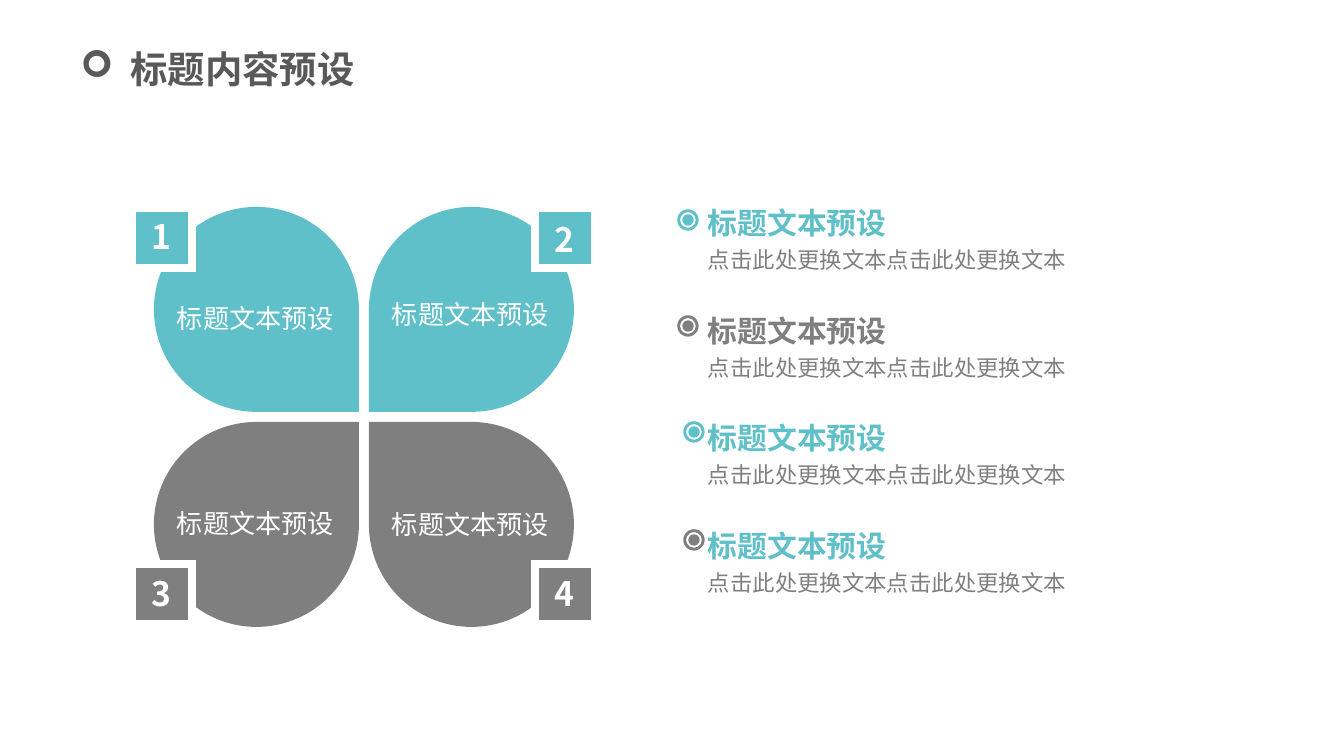
import pptx
import pptx.util
import pptx.dml.color
import pptx.enum.shapes
import pptx.enum.text
import pptx.oxml.ns
from lxml import etree

PX = 914400 / 134.4
FONT = "Noto Sans CJK SC"
HEX = {"teal": "5FC0C9", "gray": "7F7F7F", "body": "808080",
       "title": "595959", "white": "FFFFFF"}
KIND = pptx.enum.shapes.MSO_SHAPE
ALIGN = pptx.enum.text.PP_ALIGN
qn = pptx.oxml.ns.qn

TITLE = "标题内容预设"
# number, label, colour, label top, number top
PETALS = [
    ("1", "标题文本预设", "teal", 295, 209),
    ("2", "标题文本预设", "teal", 291, 212),
    ("3", "标题文本预设", "gray", 500, 566),
    ("4", "标题文本预设", "gray", 501, 566),
]
# heading, body, heading colour, marker colour, marker left, marker top
ITEMS = [
    ("标题文本预设", "点击此处更换文本点击此处更换文本", "teal", "teal", 678, 210),
    ("标题文本预设", "点击此处更换文本点击此处更换文本", "gray", "gray", 678, 316),
    ("标题文本预设", "点击此处更换文本点击此处更换文本", "teal", "teal", 684, 422),
    ("标题文本预设", "点击此处更换文本点击此处更换文本", "teal", "gray", 684, 530),
]


def emu(*nums):
    return [pptx.util.Emu(round(n * PX)) for n in nums]


def rgb(name):
    return pptx.dml.color.RGBColor.from_string(HEX[name])


def style(para, size, color, bold=False):
    font = para.font
    font.size = pptx.util.Pt(size)
    font.bold = bold
    font.color.rgb = rgb(color)
    font.name = FONT
    # East Asian text takes its own typeface entry
    etree.SubElement(font._rPr, qn("a:ea")).set("typeface", FONT)


def shape(kind, box, color, line=None, width=0):
    item = slide.shapes.add_shape(kind, *emu(*box))
    item.shadow.inherit = False
    item.fill.solid()
    item.fill.fore_color.rgb = rgb(color)
    if line:
        item.line.color.rgb = rgb(line)
        item.line.width = pptx.util.Pt(width)
    else:
        item.line.fill.background()
    return item


def text(words, box, size, color, bold=False, wrap=False, pad=0,
         align=ALIGN.LEFT, space=None):
    frame = slide.shapes.add_textbox(*emu(*box)).text_frame
    frame.word_wrap = wrap
    frame.margin_left = frame.margin_right = 0
    frame.margin_top = frame.margin_bottom = emu(pad)[0]
    para = frame.paragraphs[0]
    para.text = words
    para.alignment = align
    if space:
        para.line_spacing = space
    style(para, size, color, bold)


def head(title):
    title.left, title.top, title.width, title.height = emu(67, 39, 378, 59)
    frame = title.text_frame
    frame.word_wrap = True
    frame.vertical_anchor = pptx.enum.text.MSO_ANCHOR.TOP
    frame.auto_size = pptx.enum.text.MSO_AUTO_SIZE.SHAPE_TO_FIT_TEXT
    para = frame.paragraphs[0]
    para.text = TITLE
    para.alignment = ALIGN.LEFT
    props = para._p.get_or_add_pPr()
    indent = emu(50)[0]
    props.set("marL", str(indent))
    props.set("indent", str(-indent))
    etree.SubElement(props, qn("a:buFont")).set("typeface", "Wingdings")
    etree.SubElement(props, qn("a:buChar")).set("char", "➢")
    style(para, 20, "title", True)


deck = pptx.Presentation()
deck.slide_width, deck.slide_height = emu(1344, 756)
slide = deck.slides.add_slide(deck.slide_layouts[5])
head(slide.shapes.title)

for i, (num, label, color, *tops) in enumerate(PETALS):
    row, col = divmod(i, 2)
    petal = shape(KIND.TEAR, (154 + 215 * col, 207 + 215 * row, 205, 205), color)
    # The tip starts at top right; flips turn it to the centre
    xfrm = petal._element.spPr.find(qn("a:xfrm"))
    if col == 1:
        xfrm.set("flipH", "1")
    if row == 0:
        xfrm.set("flipV", "1")

for i, (num, label, color, mid, top) in enumerate(PETALS):
    row, col = divmod(i, 2)
    left = 132 + 403 * col
    badge = shape(KIND.RECTANGLE, (left, 208 + 356 * row, 60, 60),
                  color, "white", 4.5)
    etree.SubElement(badge.line._ln, qn("a:miter")).set("lim", "800000")
    text(label, (175 + 215 * col, mid, 161, 56), 14, "white", pad=7,
         align=ALIGN.CENTER)
    text(num, (left + 7, top, 44, 34), 18, "white", True, pad=7,
         align=ALIGN.CENTER)

for i, (name, body, color, mark, left, top) in enumerate(ITEMS):
    y = 205 + (i * 215 + 1) // 2
    text(name, (708, y, 190, 24), 16, color, True)
    text(body, (708, y + 36, 556, 24), 12, "body", wrap=True, space=1.2)
    shape(KIND.OVAL, (left + 5, top + 5, 10, 10), mark, mark, 0.75)
    ring = shape(KIND.DONUT, (left, top, 20, 20), mark, mark, 0.75)
    ring.adjustments[0] = 0.07

deck.save("out.pptx")
